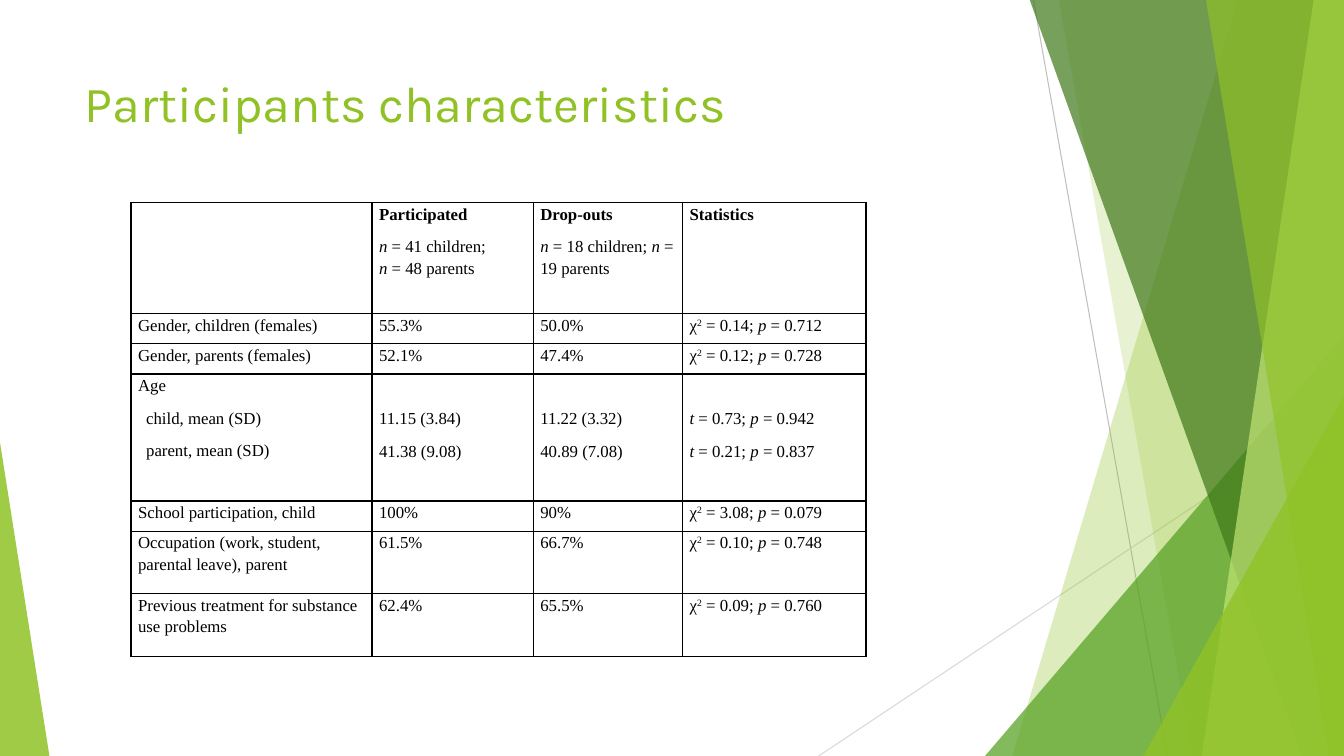
from dataclasses import dataclass
from typing import Optional

from lxml import etree
from pptx import Presentation
from pptx.dml.color import RGBColor
from pptx.enum.shapes import MSO_CONNECTOR, MSO_SHAPE
from pptx.enum.text import MSO_ANCHOR, MSO_AUTO_SIZE, PP_ALIGN
from pptx.oxml.ns import qn
from pptx.util import Pt

EMU_PER_PX = 9144  # 100 px to the inch
WIDTH, HEIGHT = 1333, 750


def px(n: int) -> int:
    return n * EMU_PER_PX


@dataclass(frozen=True)
class Theme:
    lime: str = "90C226"
    pale_lime: str = "C0E474"
    green: str = "54A021"
    dark_green: str = "3F7819"
    grey: str = "BFBFBF"
    light_grey: str = "D9D9D9"
    ink: str = "000000"
    title_font: str = "Karla"
    title_size: int = 36
    table_font: str = "Times New Roman"
    table_size: int = 12


THEME = Theme()


@dataclass(frozen=True)
class Ray:
    start: tuple[int, int]
    end: tuple[int, int]
    color: str


@dataclass(frozen=True)
class Band:
    """Full-height facet ending at the right edge of the slide."""
    top_x: int
    bottom_x: int
    color: str
    opacity: int


@dataclass(frozen=True)
class Corner:
    """Triangle standing on the bottom edge, with its apex at one side."""
    left: int
    top: int
    width: int
    apex: int
    color: str
    opacity: int


@dataclass(frozen=True)
class Run:
    text: str
    italic: bool = False
    superscript: bool = False


@dataclass(frozen=True)
class Para:
    runs: tuple[Run, ...]
    bold: bool = False
    indent: int = 0


@dataclass(frozen=True)
class Cell:
    paras: tuple[Para, ...] = ()
    top: int = 0


BREAK = Run("\n")
N, P, T = (Run(letter, italic=True) for letter in "npt")
CHI2 = (Run("χ"), Run("2", superscript=True))


def plain(text: str, bold: bool = False, indent: int = 0) -> Para:
    return Para((Run(text),), bold, indent)


def stat(symbol: tuple[Run, ...], value: str, p: str) -> Para:
    return Para((*symbol, Run(f" = {value}; "), P, Run(f" = {p}")))


def chi_row(label: str, joined: str, dropped: str, value: str, p: str) -> tuple[Cell, ...]:
    paras = plain(label), plain(joined), plain(dropped), stat(CHI2, value, p)
    return tuple(Cell((para,)) for para in paras)


RAYS = (
    Ray((1025, 0), (1158, 750), THEME.grey),
    Ray((1333, 403), (812, 750), THEME.light_grey),
)
FACETS = (
    Band(1228, 1004, THEME.lime, 30),
    Band(1050, 1183, THEME.lime, 20),
    Corner(977, 333, 356, 1, THEME.green, 72),
    Band(1021, 1291, THEME.dark_green, 70),
    Band(1303, 1192, THEME.pale_lime, 70),
    Band(1196, 1318, THEME.lime, 65),
    Corner(1134, 393, 199, 1, THEME.lime, 80),
    Corner(0, 439, 49, 0, THEME.lime, 85),
)

COLUMNS = (239, 160, 148, 182)
ROW_HEIGHTS = (110, 30, 30, 126, 30, 62, 62)
LINE_STEP = 33
ROWS = (
    (
        Cell(),
        Cell((plain("Participated", bold=True),
              Para((N, Run(" = 41 children;"), BREAK, N, Run(" = 48 parents"))))),
        Cell((plain("Drop-outs", bold=True),
              Para((N, Run(" = 18 children; "), N, Run(" = 19 parents"))))),
        Cell((plain("Statistics", bold=True),)),
    ),
    chi_row("Gender, children (females)", "55.3%", "50.0%", "0.14", "0.712"),
    chi_row("Gender, parents (females)", "52.1%", "47.4%", "0.12", "0.728"),
    (
        Cell((plain("Age"), plain("child, mean (SD)", indent=8),
              plain("parent, mean (SD)", indent=8))),
        Cell((plain("11.15 (3.84)"), plain("41.38 (9.08)")), LINE_STEP),
        Cell((plain("11.22 (3.32)"), plain("40.89 (7.08)")), LINE_STEP),
        Cell((stat((T,), "0.73", "0.942"), stat((T,), "0.21", "0.837")), LINE_STEP),
    ),
    chi_row("School participation, child", "100%", "90%", "3.08", "0.079"),
    chi_row("Occupation (work, student, parental leave), parent",
            "61.5%", "66.7%", "0.10", "0.748"),
    chi_row("Previous treatment for substance use problems",
            "62.4%", "65.5%", "0.09", "0.760"),
)


def set_font(p, name: str, size: int, color: str, bold: Optional[bool] = None) -> None:
    p.font.name, p.font.size, p.font.bold = name, Pt(size), bold
    p.font.color.rgb = RGBColor.from_string(color)


def draw_ray(slide, ray: Ray) -> None:
    line = slide.shapes.add_connector(MSO_CONNECTOR.STRAIGHT, *map(px, ray.start + ray.end))
    line.line.color.rgb = RGBColor.from_string(ray.color)
    line.line.width = Pt(0.75)
    etree.SubElement(line._element.spPr, qn("a:effectLst"))


def draw_facet(slide, facet: Band | Corner) -> None:
    if isinstance(facet, Band):
        outline = slide.shapes.build_freeform(px(facet.top_x), px(-1))
        corners = (WIDTH, -1), (WIDTH, HEIGHT), (facet.bottom_x, HEIGHT)
        outline.add_line_segments([(px(x), px(y)) for x, y in corners])
        sp = outline.convert_to_shape()
    else:
        sp = slide.shapes.add_shape(
            MSO_SHAPE.ISOSCELES_TRIANGLE, px(facet.left), px(facet.top),
            px(facet.width), px(HEIGHT - facet.top))
        sp.adjustments[0] = facet.apex
    sp.shadow.inherit = False
    sp.line.fill.background()
    sp.fill.solid()
    sp.fill.fore_color.rgb = RGBColor.from_string(facet.color)
    color = sp._element.spPr.find(".//" + qn("a:srgbClr"))
    etree.SubElement(color, qn("a:alpha"), val=str(facet.opacity * 1000))


def draw_title(slide, text: str) -> None:
    title = slide.shapes.title
    title.left, title.top, title.width, title.height = map(px, (74, 67, 940, 144))
    tf = title.text_frame
    tf.text = text
    tf.vertical_anchor = MSO_ANCHOR.TOP
    tf.auto_size = MSO_AUTO_SIZE.NONE
    tf.paragraphs[0].alignment = PP_ALIGN.LEFT
    set_font(tf.paragraphs[0], THEME.title_font, THEME.title_size, THEME.lime)


def add_borders(cell) -> None:
    tc_pr = cell._tc.get_or_add_tcPr()
    for i, side in enumerate(("lnL", "lnR", "lnT", "lnB")):
        ln = etree.Element(qn(f"a:{side}"), w=str(Pt(1)))
        fill = etree.SubElement(ln, qn("a:solidFill"))
        etree.SubElement(fill, qn("a:srgbClr"), val=THEME.ink)
        tc_pr.insert(i, ln)


def fill_cell(cell, content: Cell) -> None:
    cell.margin_left = cell.margin_right = px(7)
    cell.margin_top, cell.margin_bottom = px(content.top), 0
    cell.fill.background()
    add_borders(cell)
    tf = cell.text_frame
    for i, para in enumerate(content.paras):
        p = tf.add_paragraph() if i else tf.paragraphs[0]
        p.line_spacing, p.space_after = 1.15, Pt(8)
        set_font(p, THEME.table_font, THEME.table_size, THEME.ink, para.bold)
        if para.indent:
            p._p.get_or_add_pPr().set("marL", str(px(para.indent)))
        for run in para.runs:
            if run is BREAK:
                p.add_line_break()
                continue
            r = p.add_run()
            r.text = run.text
            if run.italic:
                r.font.italic = True
            if run.superscript:
                r._r.get_or_add_rPr().set("baseline", "30000")


def draw_table(slide) -> None:
    frame = slide.shapes.add_table(len(ROWS), len(COLUMNS), px(130), px(201),
                                   px(sum(COLUMNS)), px(sum(ROW_HEIGHTS)))
    table = frame.table
    table.first_row = table.horz_banding = False
    for column, width in zip(table.columns, COLUMNS):
        column.width = px(width)
    for row, height, contents in zip(table.rows, ROW_HEIGHTS, ROWS):
        row.height = px(height)
        for cell, content in zip(row.cells, contents):
            fill_cell(cell, content)


def main() -> None:
    prs = Presentation()
    prs.slide_width, prs.slide_height = px(WIDTH), px(HEIGHT)
    slide = prs.slides.add_slide(prs.slide_layouts[5])
    for ray in RAYS:
        draw_ray(slide, ray)
    for facet in FACETS:
        draw_facet(slide, facet)
    draw_title(slide, "Participants characteristics")
    draw_table(slide)
    prs.save("out.pptx")


if __name__ == "__main__":
    main()
